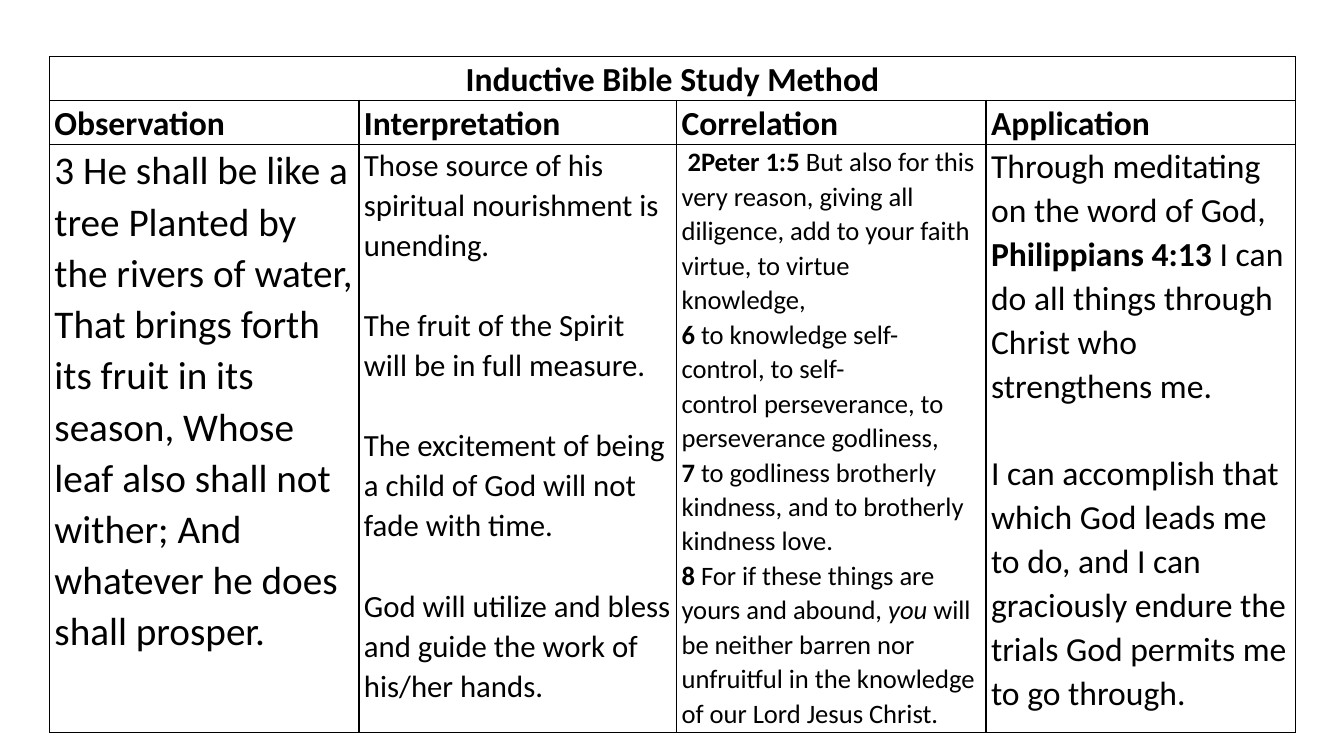
from lxml.etree import SubElement
from pptx import Presentation
from pptx.dml.color import RGBColor
from pptx.enum.text import PP_ALIGN
from pptx.oxml.ns import qn
from pptx.util import Emu, Inches, Pt

BLACK = RGBColor(0x00, 0x00, 0x00)
WHITE = RGBColor(0xFF, 0xFF, 0xFF)
HARD_SPACE = chr(160)  # typed as ~ in the wording below
LINE_FACTOR = 1.07
BOLD, ITALIC = "bold", "italic"

TITLE = "Inductive Bible Study Method"
HEADINGS = ["Observation", "Interpretation", "Correlation", "Application"]

# Each column: text size, gap after a paragraph, paragraphs of (text, style) runs
OBSERVATION = (28, 0, [
    [("3 He shall be like a tree Planted by the~rivers of water,\n"
      "That brings forth its fruit in its season, Whose leaf also shall not "
      "wither; And whatever he does shall~prosper.", None)],
])
INTERPRETATION = (22, 28.7, [
    [("Those source of his spiritual nourishment is unending.", None)],
    [("The fruit of the Spirit will be in full measure.", None)],
    [("The excitement of being a child of God will not fade with time.", None)],
    [("God will utilize and bless and guide the work of his/her hands.", None)],
])
CORRELATION = (19, 0, [
    [("~", None), ("2Peter 1:5~", BOLD),
     ("But also for this very reason,~giving all diligence, add to your faith "
      "virtue, to virtue", None)],
    [("knowledge,~", None)],
    [("6~", BOLD),
     ("to knowledge self-control, to self-control~perseverance, "
      "to perseverance godliness,~", None)],
    [("7~", BOLD),
     ("to godliness brotherly kindness, and~to brotherly kindness love.~", None)],
    [("8~", BOLD), ("For if these things are yours and abound,~", None),
     ("you", ITALIC),
     ("~will be neither~barren~nor unfruitful in the knowledge of our Lord "
      "Jesus Christ.", None)],
])
APPLICATION = (24, 31.3, [
    [("Through meditating on the word of God, ", None),
     ("Philippians 4:13 ", BOLD),
     ("I can do all things through Christ who strengthens me.", None)],
    [("I can accomplish that which God leads me to do, and I can graciously "
      "endure the trials God permits me to go through.", None)],
])
STUDY = [OBSERVATION, INTERPRETATION, CORRELATION, APPLICATION]


class StudySlide:
    """Holds the style and the current slide; lengths are shares of its size."""

    font = "Calibri"
    border = Pt(1)
    side_margin = Inches(0.05)

    def __init__(self, deck):
        self.width, self.height = deck.slide_width, deck.slide_height
        self.slide = deck.slides.add_slide(deck.slide_layouts[6])

    def across(self, share):
        return Emu(round(self.width * share))

    def down(self, share):
        return Emu(round(self.height * share))

    def table(self, left, top, columns, rows):
        grid = self.slide.shapes.add_table(
            len(rows), len(columns), self.across(left), self.down(top),
            self.across(sum(columns)), self.down(sum(rows))).table
        grid.first_row = grid.horz_banding = False
        for column, share in zip(grid.columns, columns):
            column.width = self.across(share)
        for row, share in zip(grid.rows, rows):
            row.height = self.down(share)
        for cell in grid.iter_cells():
            self.plain_cell(cell)
        return grid

    def plain_cell(self, cell):
        cell.margin_left = cell.margin_right = self.side_margin
        cell.margin_top = cell.margin_bottom = 0
        # Borders come before the fill in the cell properties
        properties = cell._tc.get_or_add_tcPr()
        for side in ("a:lnL", "a:lnR", "a:lnT", "a:lnB"):
            line = SubElement(properties, qn(side), w=str(self.border))
            ink = SubElement(line, qn("a:solidFill"))
            SubElement(ink, qn("a:srgbClr"), val=str(BLACK))
        cell.fill.solid()
        cell.fill.fore_color.rgb = WHITE

    def cell_text(self, cell, size, gap, paragraphs, align=PP_ALIGN.LEFT):
        frame = cell.text_frame
        for number, runs in enumerate(paragraphs):
            paragraph = frame.add_paragraph() if number else frame.paragraphs[0]
            paragraph.alignment = align
            paragraph.line_spacing = LINE_FACTOR
            paragraph.space_before = Pt(0)
            last = number == len(paragraphs) - 1
            paragraph.space_after = Pt(0 if last else gap)
            for text, style in runs:
                self.styled_run(paragraph, size, text, style)

    def styled_run(self, paragraph, size, text, style):
        for number, line in enumerate(text.split("\n")):
            if number:
                paragraph.add_line_break()
            run = paragraph.add_run()
            run.text = line.replace("~", HARD_SPACE)
            run.font.name = self.font
            run.font.size = Pt(size)
            run.font.bold = style == BOLD
            run.font.italic = style == ITALIC
            run.font.color.rgb = BLACK


def main():
    deck = Presentation()
    deck.slide_width, deck.slide_height = Inches(13.33), Inches(7.5)
    page = StudySlide(deck)

    # Grid: title row, heading row, study row
    columns = [inches / 13.33 for inches in (3.07, 3.15, 3.07, 3.07)]
    rows = [inches / 7.5 for inches in (0.41, 0.42, 5.84)]
    study = page.table(0.49 / 13.33, 0.56 / 7.5, columns, rows)

    # Title across all columns
    title = study.cell(0, 0)
    title.merge(study.cell(0, len(columns) - 1))
    page.cell_text(title, 24, 0, [[(TITLE, BOLD)]], PP_ALIGN.CENTER)

    # Headings with the study below
    for column, (heading, content) in enumerate(zip(HEADINGS, STUDY)):
        page.cell_text(study.cell(1, column), 24, 0, [[(heading, BOLD)]])
        page.cell_text(study.cell(2, column), *content)

    deck.save("out.pptx")


if __name__ == "__main__":
    main()
